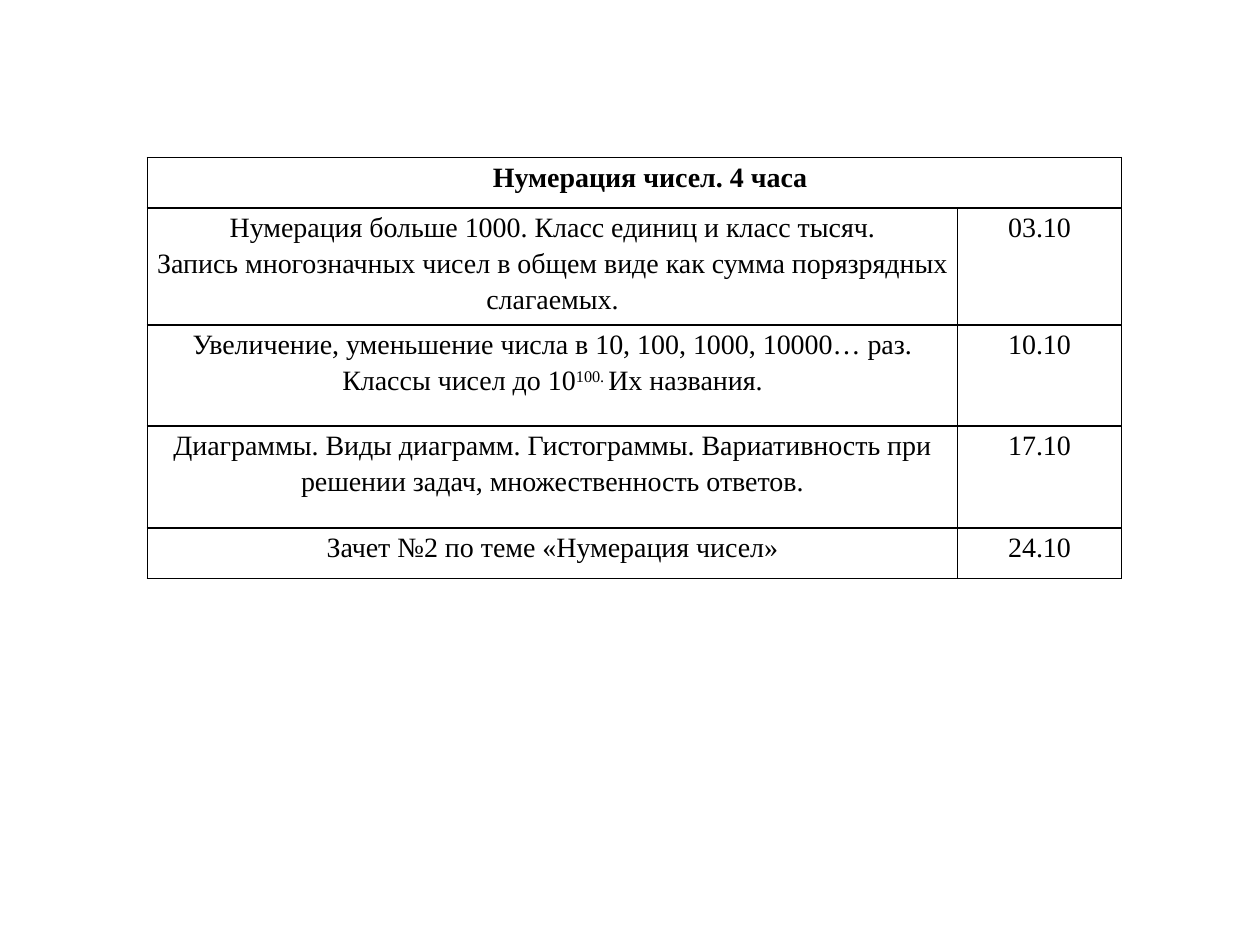
import pptx
import pptx.dml.color
import pptx.enum.text
import pptx.oxml
import pptx.oxml.ns
import pptx.util
from pptx.util import Inches

BLACK = pptx.dml.color.RGBColor(0x00, 0x00, 0x00)
WHITE = pptx.dml.color.RGBColor(0xFF, 0xFF, 0xFF)

FONT_FORMAT = {"name": "Times New Roman", "size": pptx.util.Pt(16)}
CELL_FORMAT = {
    "margin_left": Inches(0.07),
    "margin_right": Inches(0.07),
    "margin_top": 0,
    "margin_bottom": 0,
    "vertical_anchor": pptx.enum.text.MSO_ANCHOR.TOP,
}
PARA_FORMAT = {"alignment": pptx.enum.text.PP_ALIGN.CENTER, "line_spacing": 1.15}

COLUMN_WIDTHS = [6.43, 1.3]
ROW_HEIGHTS = [0.4, 0.93, 0.8, 0.81, 0.4]
HEADING = "Нумерация чисел. 4 часа"
SUPERSCRIPT = "100. "

# Each lesson: paragraphs of text spans, then the date.
LESSONS = [
    ([["Нумерация больше 1000. Класс единиц и класс тысяч."],
      ["Запись многозначных чисел в общем виде как сумма порязрядных слагаемых."]],
     "03.10"),
    ([["Увеличение, уменьшение числа в 10, 100, 1000, 10000… раз. Классы чисел до 10",
       SUPERSCRIPT, "Их названия."]],
     "10.10"),
    ([["Диаграммы. Виды диаграмм. Гистограммы. Вариативность при решении задач, "
       "множественность ответов."]],
     "17.10"),
    ([["Зачет №2 по теме «Нумерация чисел»"]], "24.10"),
]


def apply_format(target, values):
    for name, value in values.items():
        setattr(target, name, value)


def add_borders(cell):
    """Draw a 1 pt line on all four sides; lines must precede the fill in the XML."""
    properties = cell._tc.get_or_add_tcPr()
    for position, side in enumerate(("lnL", "lnR", "lnT", "lnB")):
        line = pptx.oxml.parse_xml(
            f'<a:{side} {pptx.oxml.ns.nsdecls("a")} w="{pptx.util.Pt(1)}">'
            f'<a:solidFill><a:srgbClr val="{BLACK}"/></a:solidFill></a:{side}>'
        )
        properties.insert(position, line)


def write_cell(cell, paragraphs, bold=False):
    apply_format(cell, CELL_FORMAT)
    for index, texts in enumerate(paragraphs):
        frame = cell.text_frame
        para = frame.add_paragraph() if index else frame.paragraphs[0]
        apply_format(para, PARA_FORMAT)
        for text in texts:
            span = para.add_run()
            span.text = text
            apply_format(span.font, FONT_FORMAT)
            span.font.bold = bold
            span.font.color.rgb = BLACK
            if text == SUPERSCRIPT:
                span._r.get_or_add_rPr().set("baseline", "30000")


def add_schedule(page):
    frame = page.shapes.add_table(
        len(ROW_HEIGHTS), len(COLUMN_WIDTHS), Inches(1.17), Inches(1.25),
        Inches(sum(COLUMN_WIDTHS)), Inches(sum(ROW_HEIGHTS)))
    table = frame.table
    table.first_row = table.horz_banding = False
    for column, width in zip(table.columns, COLUMN_WIDTHS):
        column.width = Inches(width)
    for row, height in zip(table.rows, ROW_HEIGHTS):
        row.height = Inches(height)
    for cell in table.iter_cells():
        cell.fill.solid()
        cell.fill.fore_color.rgb = WHITE
        add_borders(cell)

    heading = table.cell(0, 0)
    heading.merge(table.cell(0, 1))
    write_cell(heading, [[HEADING]], bold=True)
    para = heading.text_frame.paragraphs[0]
    para.space_after = pptx.util.Pt(10)
    para._p.get_or_add_pPr().set("marL", str(Inches(0.25)))

    for row, (topic, date) in enumerate(LESSONS, start=1):
        write_cell(table.cell(row, 0), topic)
        write_cell(table.cell(row, 1), [[date]])


def main():
    deck = pptx.Presentation()
    deck.slide_width, deck.slide_height = Inches(10), Inches(7.5)
    page = deck.slides.add_slide(deck.slide_layouts.get_by_name("Blank"))
    add_schedule(page)
    deck.save("out.pptx")


if __name__ == "__main__":
    main()
